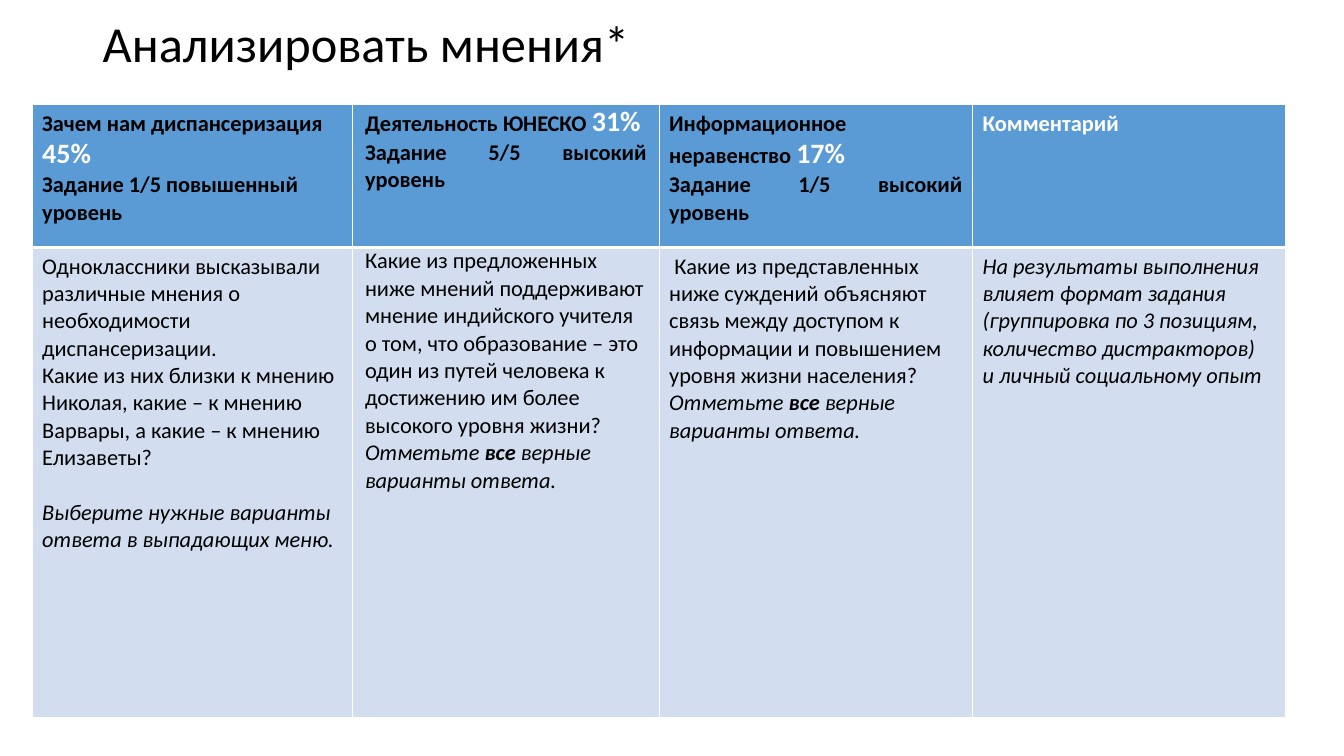
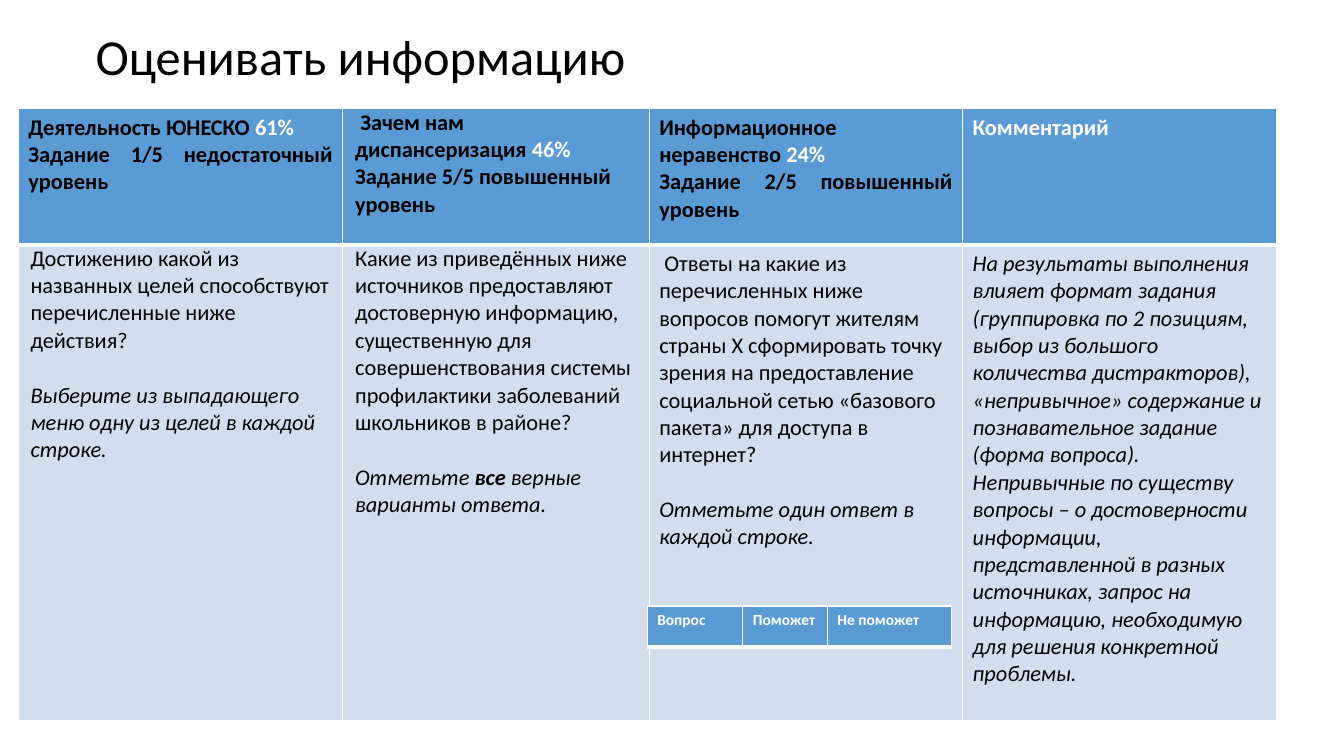
"""Build two slides that compare pupils' results by skill in tables."""
from dataclasses import dataclass

from lxml import etree
from pptx import Presentation
from pptx.dml.color import RGBColor
from pptx.enum.text import MSO_ANCHOR, PP_ALIGN
from pptx.oxml.ns import qn
from pptx.util import Cm, Pt

LEFT, JUSTIFY = PP_ALIGN.LEFT, PP_ALIGN.JUSTIFY
TOP = MSO_ANCHOR.TOP
BLANK_LAYOUT = 6


@dataclass(frozen=True)
class Theme:
    font: str = "Calibri"
    ink: str = "000000"
    white: str = "FFFFFF"
    header: str = "5B9BD5"
    body: str = "D2DEEF"
    title_size: float = 36
    text_size: float = 16
    share_size: float = 20
    answer_size: float = 11
    line_gap: float = 19.5
    thin_rule: float = 1
    thick_rule: float = 3
    indent: float = 0.13


THEME = Theme()


@dataclass(frozen=True)
class Span:
    text: str
    color: str | None = None
    size: float | None = None
    bold: bool | None = None


@dataclass(frozen=True)
class Para:
    spans: tuple[Span, ...]
    color: str = THEME.ink
    size: float = THEME.text_size
    bold: bool = False
    italic: bool = False
    align: PP_ALIGN = LEFT
    gap_before: float = 0
    indented: bool = False


@dataclass(frozen=True)
class Entry:
    paras: tuple[Para, ...]
    flush: bool = False


@dataclass(frozen=True)
class Grid:
    left: float
    top: float
    widths: tuple[float, ...]
    heights: tuple[float, ...]
    rows: tuple[tuple[Entry, ...], ...]


@dataclass(frozen=True)
class Page:
    title: str
    title_left: float
    title_top: float
    grids: tuple[Grid, ...]


def heading(topic: str, share: str, level: str, align: PP_ALIGN = LEFT,
            share_size: float = THEME.text_size, flush: bool = False,
            indented: bool = False) -> Entry:
    """Make a header entry with a topic, its share and the task level."""
    share_span = Span(share, THEME.white, share_size)
    return Entry((
        Para((Span(f"{topic} "), share_span), bold=True, align=align, indented=indented),
        Para((Span(level),), bold=True, align=align),
    ), flush)


def label(text: str, size: float = THEME.text_size) -> Entry:
    """Make a white header entry."""
    return Entry((Para((Span(text),), THEME.white, size, bold=True),))


def plain(text: str, indented: bool = False) -> Para:
    """Make an upright paragraph."""
    return Para((Span(text),), indented=indented)


def italic(text: str, gap_before: float = 0) -> Para:
    """Make an italic paragraph."""
    return Para((Span(text),), italic=True, gap_before=gap_before)


def mark_all(gap_before: float = 0) -> Para:
    """Make the instruction to mark every right answer."""
    return Para((Span("Отметьте "), Span("все", bold=True), Span(" верные варианты ответа.")),
                italic=True, gap_before=gap_before)


def style_font(font, color: str | None, size: float | None, bold: bool | None) -> None:
    """Apply the values that are given to a font."""
    if color is not None:
        font.color.rgb = RGBColor.from_string(color)
    if size is not None:
        font.size = Pt(size)
    if bold is not None:
        font.bold = bold


def write_para(paragraph, para: Para) -> None:
    """Fill a paragraph with styled spans."""
    paragraph.alignment = para.align
    paragraph.space_before = Pt(para.gap_before)
    paragraph.font.name = THEME.font
    paragraph.font.italic = para.italic
    style_font(paragraph.font, para.color, para.size, para.bold)
    if para.indented:
        properties = paragraph._p.get_or_add_pPr()
        properties.set("marL", "0")
        properties.set("indent", str(Cm(THEME.indent)))
    for span in para.spans:
        run = paragraph.add_run()
        run.text = span.text
        style_font(run.font, span.color, span.size, span.bold)


def draw_borders(cell, is_header: bool) -> None:
    """Rule a cell in white, with a thick line under the header."""
    top, bottom = THEME.thin_rule, THEME.thin_rule
    if is_header:
        bottom = THEME.thick_rule
    else:
        top = THEME.thick_rule
    widths = {"a:lnL": THEME.thin_rule, "a:lnR": THEME.thin_rule, "a:lnT": top, "a:lnB": bottom}
    properties = cell._tc.get_or_add_tcPr()
    for tag, width in widths.items():
        line = etree.SubElement(properties, qn(tag), w=str(Pt(width)))
        fill = etree.SubElement(line, qn("a:solidFill"))
        etree.SubElement(fill, qn("a:srgbClr"), val=THEME.white)


def draw_entry(cell, entry: Entry, is_header: bool) -> None:
    """Fill one table cell."""
    draw_borders(cell, is_header)
    cell.fill.solid()
    cell.fill.fore_color.rgb = RGBColor.from_string(THEME.header if is_header else THEME.body)
    cell.vertical_anchor = TOP
    if entry.flush:
        cell.margin_left = cell.margin_right = Cm(0.31)
        cell.margin_top = cell.margin_bottom = 0
    frame = cell.text_frame
    for index, para in enumerate(entry.paras):
        write_para(frame.add_paragraph() if index else frame.paragraphs[0], para)


def draw_grid(slide, grid: Grid) -> None:
    """Draw a table whose first row is the header."""
    table = slide.shapes.add_table(
        len(grid.rows), len(grid.widths), Cm(grid.left), Cm(grid.top),
        Cm(sum(grid.widths)), Cm(sum(grid.heights))).table
    for column, width in zip(table.columns, grid.widths):
        column.width = Cm(width)
    for row, height in zip(table.rows, grid.heights):
        row.height = Cm(height)
    for row_index, entries in enumerate(grid.rows):
        for column_index, entry in enumerate(entries):
            draw_entry(table.cell(row_index, column_index), entry, row_index == 0)


def draw_page(deck, page: Page) -> None:
    """Add a slide with its title and tables."""
    slide = deck.slides.add_slide(deck.slide_layouts[BLANK_LAYOUT])
    frame = slide.shapes.add_textbox(
        Cm(page.title_left), Cm(page.title_top), Cm(29.21), Cm(3.68)).text_frame
    frame.word_wrap = True
    frame.vertical_anchor = TOP
    title = frame.paragraphs[0]
    title.line_spacing = 0.9
    write_para(title, Para((Span(page.title),), size=THEME.title_size))
    for grid in page.grids:
        draw_grid(slide, grid)


OPINIONS = Grid(0.81, 2.64, (8.08, 7.72, 7.9, 7.9), (3.6, 11.83), (
    (
        heading("Зачем нам диспансеризация", "45%", "Задание 1/5 повышенный уровень",
                share_size=THEME.share_size),
        heading("Деятельность ЮНЕСКО", "31%", "Задание 5/5 высокий уровень", JUSTIFY,
                THEME.share_size, flush=True),
        heading("Информационное неравенство", "17%", "Задание 1/5 высокий уровень", JUSTIFY,
                THEME.share_size),
        label("Комментарий"),
    ),
    (
        Entry((
            plain("Одноклассники высказывали различные мнения о необходимости диспансеризации."),
            plain("Какие из них близки к мнению Николая, какие – к мнению Варвары, "
                  "а какие – к мнению Елизаветы?"),
            italic("Выберите нужные варианты ответа в выпадающих меню.", THEME.line_gap),
        )),
        Entry((
            plain("Какие из предложенных ниже мнений поддерживают мнение индийского учителя "
                  "о том, что образование – это один из путей человека к достижению им "
                  "более высокого уровня жизни?"),
            mark_all(),
        ), flush=True),
        Entry((
            plain("Какие из представленных ниже суждений объясняют связь между доступом "
                  "к информации и повышением уровня жизни населения?", indented=True),
            mark_all(),
        )),
        Entry((
            italic("На результаты выполнения влияет формат задания (группировка "
                   "по 3 позициям, количество дистракторов)"),
            italic("и личный социальному опыт"),
        )),
    ),
))

INFORMATION = Grid(0.46, 2.74, (8.18, 7.72, 7.9, 7.9), (3.43, 12), (
    (
        heading("Деятельность ЮНЕСКО", "61%", "Задание 1/5 недостаточный уровень", JUSTIFY),
        heading("Зачем нам диспансеризация", "46%", "Задание 5/5 повышенный уровень",
                flush=True, indented=True),
        heading("Информационное неравенство", "24%", "Задание 2/5 повышенный уровень", JUSTIFY),
        label("Комментарий"),
    ),
    (
        Entry((
            plain("Достижению какой из названных целей способствуют перечисленные ниже действия?"),
            italic("Выберите из выпадающего меню одну из целей в каждой строке.", THEME.line_gap),
        ), flush=True),
        Entry((
            plain("Какие из приведённых ниже источников предоставляют достоверную информацию, "
                  "существенную для совершенствования системы профилактики заболеваний "
                  "школьников в районе?"),
            mark_all(THEME.line_gap),
        ), flush=True),
        Entry((
            plain("Ответы на какие из перечисленных ниже вопросов помогут жителям страны Х "
                  "сформировать точку зрения на предоставление социальной сетью "
                  "«базового пакета» для доступа в интернет?", indented=True),
            italic("Отметьте один ответ в каждой строке.", THEME.line_gap),
        )),
        Entry((
            italic("На результаты выполнения влияет формат задания (группировка "
                   "по 2 позициям, выбор из большого количества дистракторов), "
                   "«непривычное» содержание и познавательное задание (форма вопроса)."),
            italic("Непривычные по существу вопросы – о достоверности информации, "
                   "представленной в разных источниках, запрос на информацию, "
                   "необходимую для решения конкретной проблемы."),
        )),
    ),
))

ANSWERS = Grid(16.31, 15.27, (2.41, 2.13, 3.12), (1.04,), (
    tuple(label(text, THEME.answer_size) for text in ("Вопрос", "Поможет", "Не поможет")),
))

PAGES = (
    Page("Анализировать мнения*", 2.34, 0.36, (OPINIONS,)),
    Page("Оценивать информацию", 2.16, 0.69, (INFORMATION, ANSWERS)),
)


def main() -> None:
    """Build and save the deck."""
    deck = Presentation()
    deck.slide_width, deck.slide_height = Cm(33.87), Cm(19.05)
    for page in PAGES:
        draw_page(deck, page)
    deck.save("out.pptx")


if __name__ == "__main__":
    main()
